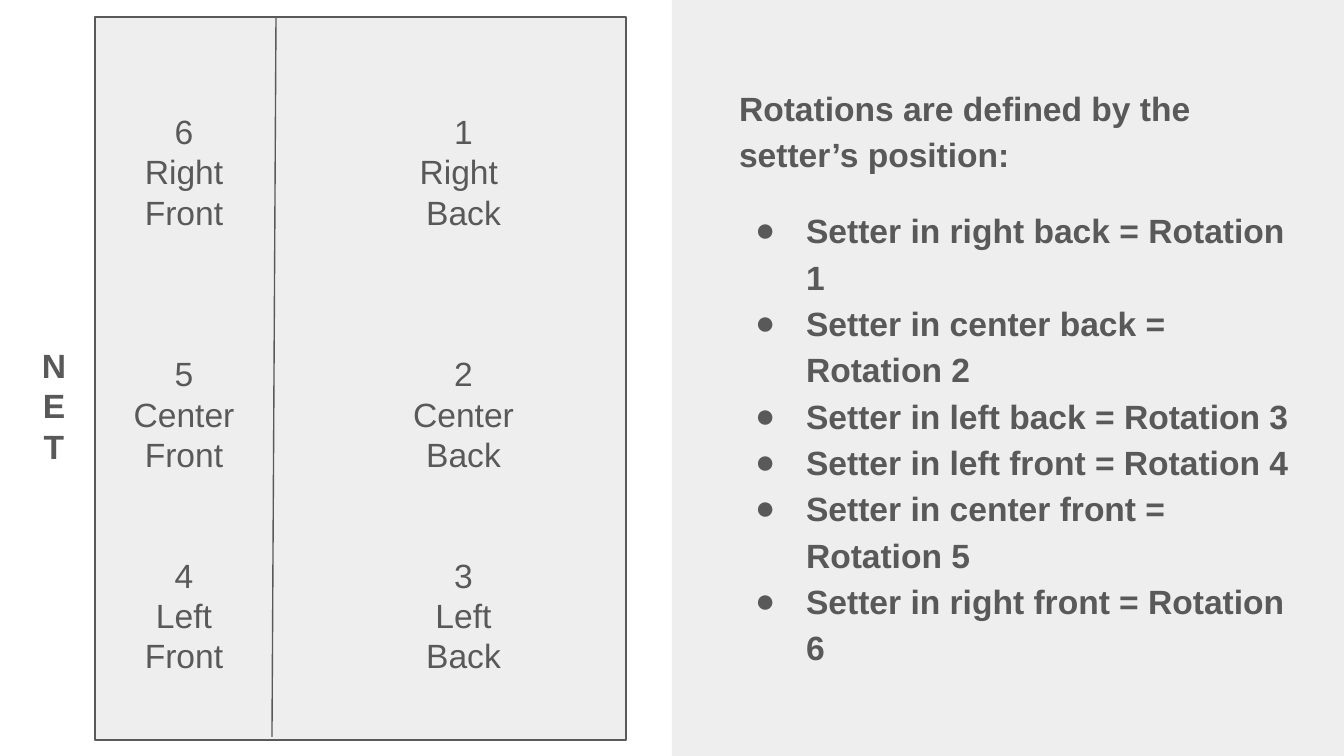
from lxml import etree
from pptx import Presentation, util as u
from pptx.dml.color import RGBColor
from pptx.enum import shapes, text
from pptx.oxml.ns import qn

PX = u.Inches(1) / 134.4
GREY = "595959"
PALE = "EEEEEE"
INSET = 13
LINE = 40


def px(length):
    return u.Emu(round(length * PX))


def paint(color_format, value):
    color_format.rgb = RGBColor.from_string(value)


def set_frame(frame, anchor=text.MSO_ANCHOR.TOP, top=INSET):
    frame.word_wrap = True
    frame.auto_size = text.MSO_AUTO_SIZE.NONE
    frame.vertical_anchor = anchor
    frame.margin_left = frame.margin_right = frame.margin_bottom = px(INSET)
    frame.margin_top = px(top)


def write(frame, content, bold=False, align=text.PP_ALIGN.CENTER, before=0, spacing=1.0):
    first = frame.paragraphs[0]
    paragraph = frame.add_paragraph() if first.runs else first
    paragraph.alignment = align
    paragraph.space_before = u.Pt(before)
    paragraph.space_after = u.Pt(0)
    paragraph.line_spacing = spacing
    run = paragraph.add_run()
    run.text = content
    run.font.name = "Arial"
    run.font.size = u.Pt(18)
    run.font.bold = bold
    paint(run.font.color, GREY)
    return paragraph


def set_bullet(paragraph, mark=None, margin=0, indent=0):
    properties = paragraph._p.get_or_add_pPr()
    properties.set("marL", str(px(margin)))
    properties.set("indent", str(px(indent)))
    if mark is None:
        etree.SubElement(properties, qn("a:buNone"))
        return
    color = etree.SubElement(properties, qn("a:buClr"))
    etree.SubElement(color, qn("a:srgbClr"), val=GREY)
    etree.SubElement(properties, qn("a:buFont"), typeface="Arial")
    etree.SubElement(properties, qn("a:buChar"), char=mark)


def add_block(slide, left, top, width, height, outlined=False):
    block = slide.shapes.add_shape(
        shapes.MSO_SHAPE.RECTANGLE, px(left), px(top), px(width), px(height))
    block.shadow.inherit = False
    block.fill.solid()
    paint(block.fill.fore_color, PALE)
    if outlined:
        paint(block.line.color, GREY)
        block.line.width = u.Pt(0.75)
    else:
        block.line.fill.background()


def add_frame(slide, left, top, width, height, inset=INSET):
    frame = slide.shapes.add_textbox(px(left), px(top), px(width), px(height)).text_frame
    set_frame(frame, top=inset)
    return frame


def add_positions(slide, left, top, width, height, positions):
    frame = add_frame(slide, left, top, width, height)
    for position, before in zip(positions, (0, 65, 43)):
        for index, content in enumerate(position):
            write(frame, content, before=before if index == 0 else 0)


def add_court(slide, left, top, width, height):
    add_block(slide, left, top, width, height, outlined=True)
    attack_line = slide.shapes.add_connector(
        shapes.MSO_CONNECTOR.STRAIGHT,
        px(left + 181), px(top), px(left + 177), px(top + height - 3))
    paint(attack_line.line.color, GREY)
    attack_line.line.width = u.Pt(0.75)
    etree.SubElement(attack_line._element.spPr, qn("a:effectLst"))
    add_positions(slide, left + 271, top + 81, 195, 609, (
        ("1", "Right ", "Back"), ("2", "Center", "Back"), ("3", "Left", "Back")))
    add_positions(slide, left + 23, top + 81, 132, 640, (
        ("6", "Right", "Front"), ("5", "Center", "Front"), ("4", "Left", "Front")))


def add_net(slide, left, top, width, height):
    frame = add_frame(slide, left, top, width, height, inset=INSET + LINE)
    for letter in "NET":
        write(frame, letter, bold=True)


def add_rotations(slide, left, top, width, height):
    add_block(slide, left, top, width, height)
    body = slide.placeholders[1]
    slide.shapes._spTree.append(body._element)
    body.left, body.top = px(left + 54), px(top + 13)
    body.width, body.height = px(594), px(723)
    frame = body.text_frame
    set_frame(frame, text.MSO_ANCHOR.MIDDLE)
    style = dict(bold=True, align=text.PP_ALIGN.LEFT, spacing=1.15)
    set_bullet(write(frame, "Rotations are defined by the setter’s position:", **style))
    places = ("right back", "center back", "left back",
              "left front", "center front", "right front")
    for number, place in enumerate(places, 1):
        rotation = write(frame, f"Setter in {place} = Rotation {number}",
                         before=16 if number == 1 else 0, **style)
        set_bullet(rotation, "●", 67, -51)


def main():
    deck = Presentation()
    deck.slide_width, deck.slide_height = px(1344), px(756)
    slide = deck.slides.add_slide(deck.slide_layouts[1])
    title = slide.shapes.title._element
    title.getparent().remove(title)
    add_rotations(slide, 672, 0, 672, 756)
    add_court(slide, 95, 17, 531, 723)
    add_net(slide, 23, 292, 62, 218)
    deck.save("out.pptx")


if __name__ == "__main__":
    main()
